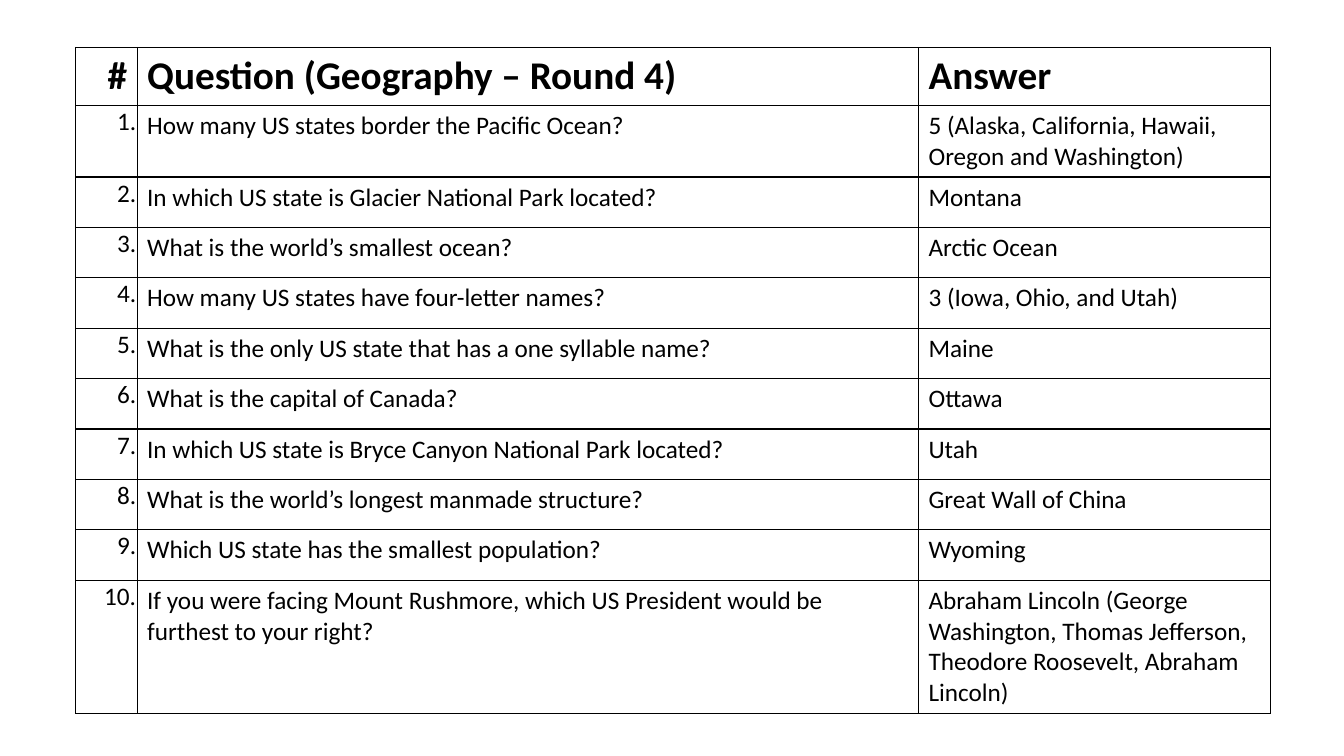
"""Build a geography quiz slide: a table of ten questions and answers."""
from lxml import etree
from pptx import Presentation
from pptx import util as u
from pptx.dml.color import RGBColor
from pptx.enum import text
from pptx.oxml import ns

COLORS = {"ink": "000000", "paper": "FFFFFF"}
HEADINGS = ("#", "Question (Geography – Round 4)", "Answer")
QUIZ = [
    ("How many US states border the Pacific Ocean?",
     "5 (Alaska, California, Hawaii, Oregon and Washington)"),
    ("In which US state is Glacier National Park located?", "Montana"),
    ("What is the world’s smallest ocean?", "Arctic Ocean"),
    ("How many US states have four-letter names?", "3 (Iowa, Ohio, and Utah)"),
    ("What is the only US state that has a one syllable name?", "Maine"),
    ("What is the capital of Canada?", "Ottawa"),
    ("In which US state is Bryce Canyon National Park located?", "Utah"),
    ("What is the world’s longest manmade structure?", "Great Wall of China"),
    ("Which US state has the smallest population?", "Wyoming"),
    ("If you were facing Mount Rushmore, which US President would be furthest to your right?",
     "Abraham Lincoln (George Washington, Thomas Jefferson, Theodore Roosevelt, Abraham Lincoln)"),
]
COLUMN_WIDTHS = (0.61, 7.75, 3.49)
ROW_HEIGHT = 0.5


def write(cell, wording, size=18, bold=False, align=text.PP_ALIGN.LEFT):
    paragraph = cell.text_frame.paragraphs[0]
    paragraph.alignment = align
    run = paragraph.add_run()
    run.text = wording
    run.font.name = "Calibri"
    run.font.size = u.Pt(size)
    run.font.bold = bold
    run.font.color.rgb = RGBColor.from_string(COLORS["ink"])


def outline(cell):
    properties = cell._tc.get_or_add_tcPr()
    for side in ("a:lnL", "a:lnR", "a:lnT", "a:lnB"):
        border = etree.SubElement(properties, ns.qn(side), w=str(u.Pt(1)))
        ink = etree.SubElement(border, ns.qn("a:solidFill"))
        etree.SubElement(ink, ns.qn("a:srgbClr"), val=COLORS["ink"])


deck = Presentation()
deck.slide_width = u.Inches(13.33)
deck.slide_height = u.Inches(7.5)
slide = deck.slides.add_slide(deck.slide_layouts[6])

rows = [HEADINGS]
for number, (question, answer) in enumerate(QUIZ, start=1):
    rows.append((f"{number}.", question, answer))

quiz_table = slide.shapes.add_table(
    len(rows), len(HEADINGS), u.Inches(0.75), u.Inches(0.47),
    u.Inches(sum(COLUMN_WIDTHS)), u.Inches(ROW_HEIGHT * len(rows))).table
quiz_table.horz_banding = False
for column, width in zip(quiz_table.columns, COLUMN_WIDTHS):
    column.width = u.Inches(width)

for r, row in enumerate(rows):
    is_heading = r == 0
    for c, wording in enumerate(row):
        cell = quiz_table.cell(r, c)
        is_number = c == 0
        if is_number and not is_heading:
            cell.margin_left = cell.margin_top = cell.margin_right = u.Inches(0.01)
            cell.margin_bottom = 0
        outline(cell)
        cell.fill.solid()
        cell.fill.fore_color.rgb = RGBColor.from_string(COLORS["paper"])
        write(cell, wording, size=28 if is_heading else 18, bold=is_heading,
              align=text.PP_ALIGN.RIGHT if is_number else text.PP_ALIGN.LEFT)

deck.save("out.pptx")
